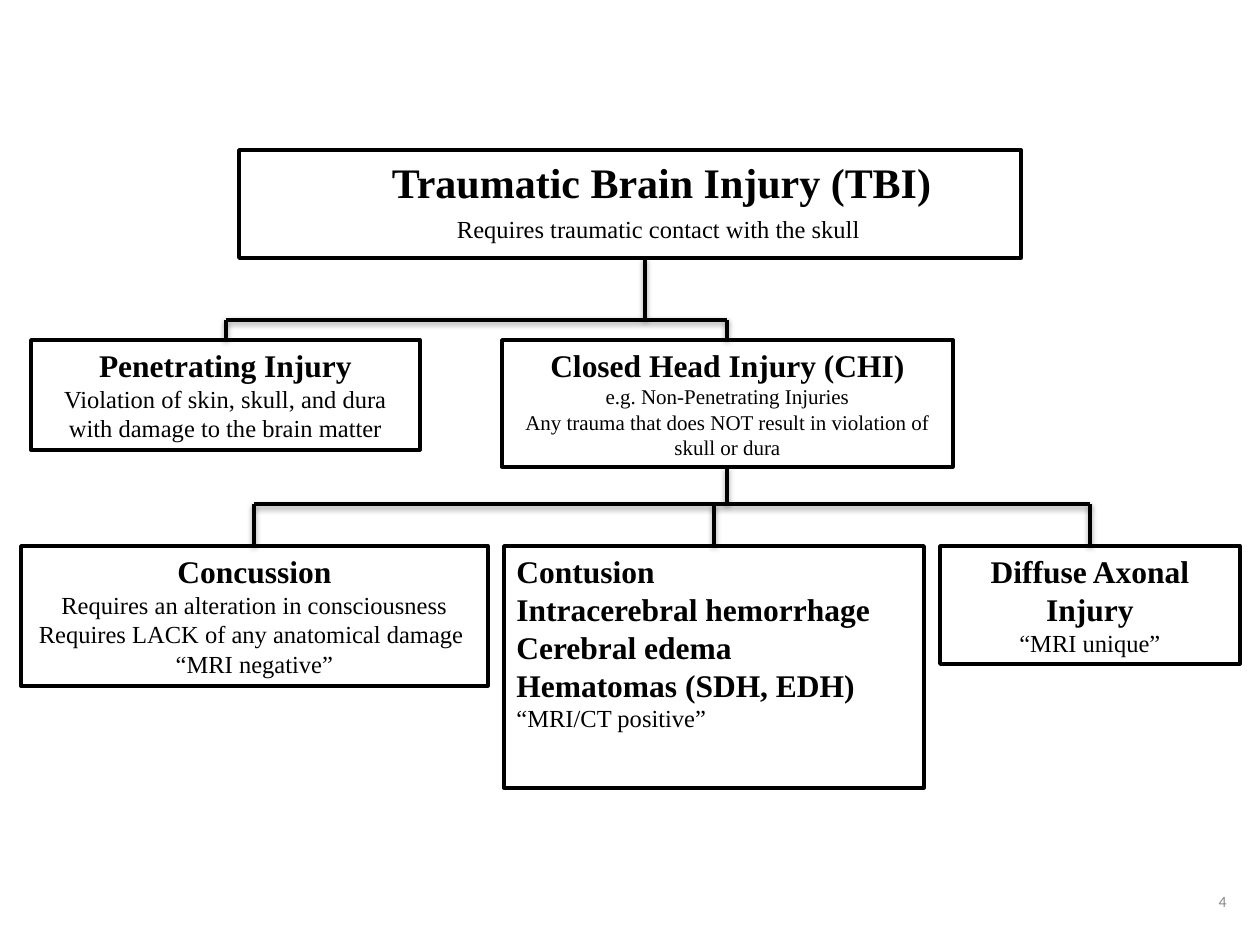
from dataclasses import dataclass

from pptx import Presentation
from pptx.dml.color import RGBColor
from pptx.enum.shapes import MSO_CONNECTOR, MSO_SHAPE
from pptx.enum.text import MSO_ANCHOR, MSO_AUTO_SIZE, PP_ALIGN
from pptx.util import Inches, Pt


@dataclass(frozen=True)
class Theme:
    ink: RGBColor = RGBColor(0x00, 0x00, 0x00)
    muted: RGBColor = RGBColor(0x89, 0x89, 0x89)
    serif: str = "Times New Roman"
    sans: str = "Calibri"
    title: int = 24
    heading: int = 18
    body: int = 14
    small: int = 12
    number: int = 9
    line: int = 2


THEME = Theme()
SCALE = Inches(1) / 126


def px(length):
    return round(length * SCALE)


def place(shape, box):
    shape.left, shape.top, shape.width, shape.height = map(px, box)


def write(frame, text, size=THEME.body, bold=False, font=THEME.serif,
          color=THEME.ink, align=PP_ALIGN.CENTER, before=0):
    first = frame.paragraphs[0]
    para = frame.add_paragraph() if first.runs else first
    para.alignment = align
    para.space_before = Pt(before)
    span = para.add_run()
    span.text = text
    span.font.name = font
    span.font.size = Pt(size)
    span.font.bold = bold
    span.font.color.rgb = color


def outline(line):
    line.color.rgb = THEME.ink
    line.width = Pt(THEME.line)


def frame_of(shape, anchor=MSO_ANCHOR.TOP):
    frame = shape.text_frame
    frame.word_wrap = True
    frame.auto_size = MSO_AUTO_SIZE.NONE
    frame.vertical_anchor = anchor
    return frame


def add_root(slide, box):
    title = slide.shapes.title
    place(title, box)
    outline(title.line)
    frame = frame_of(title)
    frame.margin_left = px(76)
    write(frame, "Traumatic Brain Injury (TBI)", size=THEME.title, bold=True)
    write(frame, "Requires traumatic contact with the skull ", before=4)


def add_node(slide, box, headings, details, size=THEME.body,
             align=PP_ALIGN.CENTER):
    node = slide.shapes.add_shape(MSO_SHAPE.RECTANGLE, *map(px, box))
    node.shadow.inherit = False
    node.fill.background()
    outline(node.line)
    frame = frame_of(node)
    for heading in headings:
        write(frame, heading, size=THEME.heading, bold=True, align=align)
    for detail in details:
        write(frame, detail, size=size, align=align)


def add_branch(slide, stem, top, bar, bottom, children):
    segments = [
        (stem, top, stem, bar),
        (min(children), bar, max(children), bar),
        *((child, bar, child, bottom) for child in children),
    ]
    for segment in segments:
        connector = slide.shapes.add_connector(
            MSO_CONNECTOR.STRAIGHT, *map(px, segment))
        outline(connector.line)


def add_number(slide, box, number):
    frame = frame_of(slide.shapes.add_textbox(*map(px, box)),
                     MSO_ANCHOR.MIDDLE)
    write(frame, number, size=THEME.number, font=THEME.sans,
          color=THEME.muted, align=PP_ALIGN.RIGHT)


def main():
    deck = Presentation()
    deck.slide_width, deck.slide_height = px(1260), px(945)
    page = deck.slides.add_slide(deck.slide_layouts[5])
    add_root(page, (239, 150, 782, 108))
    add_number(page, (945, 876, 294, 50), "4")
    add_node(page, (31, 340, 389, 110), ["Penetrating Injury"],
             ["Violation of skin, skull, and dura with damage to the brain matter"])
    add_node(page, (502, 340, 451, 127), ["Closed Head Injury (CHI)"],
             ["e.g. Non-Penetrating Injuries",
              "Any trauma that does NOT result in violation of skull or dura"],
             size=THEME.small)
    add_node(page, (21, 546, 467, 140), ["Concussion"],
             ["Requires an alteration in consciousness",
              "Requires LACK of any anatomical damage ",
              "“MRI negative”"])
    add_node(page, (504, 546, 420, 242),
             ["Contusion", "Intracerebral hemorrhage", "Cerebral edema",
              "Hematomas (SDH, EDH)"],
             ["“MRI/CT positive”"], align=PP_ALIGN.LEFT)
    add_node(page, (940, 546, 300, 118), ["Diffuse Axonal Injury"],
             ["“MRI unique”"])
    add_branch(page, 645, 258, 320, 340, [226, 727])
    add_branch(page, 727, 467, 504, 546, [254, 714, 1090])
    deck.save("out.pptx")


if __name__ == "__main__":
    main()
